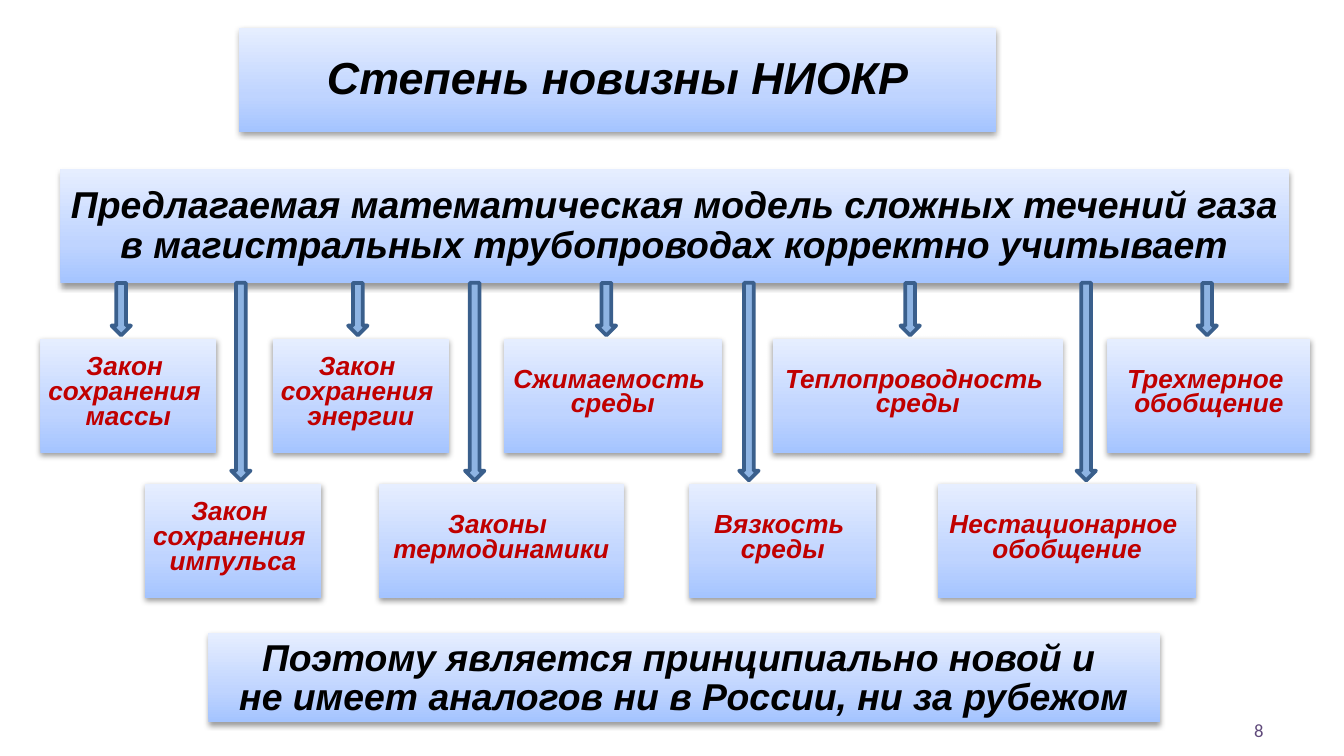
"""Builds the slide on the novelty of the gas flow model."""
from dataclasses import dataclass

from lxml import etree
from pptx import Presentation
from pptx import util as u
from pptx.dml.color import RGBColor
from pptx.enum import shapes, text
from pptx.oxml.ns import qn


@dataclass(frozen=True)
class Theme:
    """Colours, fonts and type sizes of the slide."""
    gradient: tuple = ((0, "A4C4FF"), (35, "BFD4FF"), (100, "E6EEFF"))
    arrow_fill: str = "8EB4E3"
    arrow_line: str = "3A5F8C"
    heading: str = "000000"
    factor: str = "C00000"
    number: str = "604A7B"
    font: str = "Arial"
    number_font: str = "Calibri"
    title_size: int = 24
    statement_size: int = 20
    factor_size: int = 14
    number_size: int = 10


THEME = Theme()
COLUMNS, ROWS = 100, 56.25
CELL = u.Inches(10) // COLUMNS
CARD_ROWS, ARROW_COLUMNS, ARROW_TOP = 8.5, 1.45, 21.05

UPPER = (
    (3, 13.1, 8.3, "Закон \nсохранения \nмассы"),
    (20.3, 13.1, 25.9, "Закон \nсохранения \nэнергии"),
    (37.5, 16.2, 44.4, "Сжимаемость \nсреды"),
    (57.5, 21.6, 67, "Теплопроводность \nсреды"),
    (82.4, 15.1, 89.1, "Трехмерное \nобобщение"),
)
LOWER = (
    (10.8, 13.1, 17.2, "Закон \nсохранения \nимпульса"),
    (28.2, 18.2, 34.6, "Законы \nтермодинамики"),
    (51.3, 13.9, 55, "Вязкость \nсреды"),
    (69.8, 19.2, 80.1, "Нестационарное \nобобщение"),
)
TIERS = ((25.2, 3.9, UPPER), (36, 14.7, LOWER))


def grid(*cells):
    """Convert grid cells to lengths."""
    return [u.Emu(round(cell * CELL)) for cell in cells]


def paint_panel(panel):
    """Give a panel its gradient and soft shadow."""
    panel.fill.gradient()
    panel.fill.gradient_angle = 90
    panel.line.fill.background()
    panel.shadow.inherit = False
    properties = panel.element.spPr
    stops = properties.find(".//" + qn("a:gsLst"))
    for stop in list(stops):
        stops.remove(stop)
    for position, colour in THEME.gradient:
        stop = etree.SubElement(stops, qn("a:gs"), pos=str(position * 1000))
        etree.SubElement(stop, qn("a:srgbClr"), val=colour)
    shadow = etree.SubElement(
        properties.find(qn("a:effectLst")), qn("a:outerShdw"),
        blurRad="40000", dist="20000", dir="5400000", rotWithShape="0")
    black = etree.SubElement(shadow, qn("a:srgbClr"), val="000000")
    etree.SubElement(black, qn("a:alpha"), val="38000")


def style_run(run, font, size, colour):
    """Set the typeface, size and colour of a run."""
    run.font.name = font
    run.font.size = u.Pt(size)
    run.font.color.rgb = RGBColor.from_string(colour)


def write_panel(panel, words, size, colour, first_spacing, next_spacing):
    """Write centred bold italic lines in a panel."""
    frame = panel.text_frame
    frame.text = words
    frame.word_wrap = True
    frame.auto_size = text.MSO_AUTO_SIZE.NONE
    frame.vertical_anchor = text.MSO_ANCHOR.MIDDLE
    frame.margin_left = frame.margin_right = u.Inches(0.01)
    frame.margin_top = frame.margin_bottom = u.Inches(0.01)
    for index, paragraph in enumerate(frame.paragraphs):
        paragraph.alignment = text.PP_ALIGN.CENTER
        paragraph.line_spacing = next_spacing if index else first_spacing
        after = etree.SubElement(paragraph._p.get_or_add_pPr(), qn("a:spcAft"))
        etree.SubElement(after, qn("a:spcPct"), val="35000")
        for run in paragraph.runs:
            style_run(run, THEME.font, size, colour)
            run.font.bold = run.font.italic = True


def set_title(slide, box, words):
    """Place and fill the title placeholder."""
    title = slide.shapes.title
    title.left, title.top, title.width, title.height = grid(*box)
    paint_panel(title)
    write_panel(title, words, THEME.title_size, THEME.heading, 0.9, 0.9)


def add_panel(slide, box, words, size, colour, first_spacing, next_spacing=0.5):
    """Add a shaded rectangle with text."""
    panel = slide.shapes.add_shape(shapes.MSO_SHAPE.RECTANGLE, *grid(*box))
    paint_panel(panel)
    write_panel(panel, words, size, colour, first_spacing, next_spacing)


def add_arrow(slide, left, rows):
    """Add a down arrow from the statement to a factor."""
    arrow = slide.shapes.add_shape(
        shapes.MSO_SHAPE.DOWN_ARROW, *grid(left, ARROW_TOP, ARROW_COLUMNS, rows))
    arrow.shadow.inherit = False
    arrow.fill.solid()
    arrow.fill.fore_color.rgb = RGBColor.from_string(THEME.arrow_fill)
    arrow.line.color.rgb = RGBColor.from_string(THEME.arrow_line)
    arrow.line.width = u.Pt(2)


def add_page_number(slide, box, number):
    """Add the page number at the lower right."""
    frame = slide.shapes.add_textbox(*grid(*box)).text_frame
    frame.text = number
    frame.word_wrap = True
    frame.vertical_anchor = text.MSO_ANCHOR.MIDDLE
    paragraph = frame.paragraphs[0]
    paragraph.alignment = text.PP_ALIGN.RIGHT
    style_run(paragraph.runs[0], THEME.number_font, THEME.number_size, THEME.number)


def main():
    """Build and save the slide."""
    deck = Presentation()
    deck.slide_width, deck.slide_height = grid(COLUMNS, ROWS)
    slide = deck.slides.add_slide(deck.slide_layouts[5])

    add_page_number(slide, (71.7, 52.8, 23.3, 3), "8")
    set_title(slide, (17.8, 2.1, 56.3, 7.7), "Степень новизны НИОКР")
    add_panel(slide, (4.5, 12.6, 91.4, CARD_ROWS),
              "Предлагаемая математическая модель сложных течений газа "
              "в магистральных трубопроводах корректно учитывает",
              THEME.statement_size, THEME.heading, 0.9)
    for top, _, factors in TIERS:
        for left, width, _, words in factors:
            add_panel(slide, (left, top, width, CARD_ROWS), words,
                      THEME.factor_size, THEME.factor, 0.5)
    add_panel(slide, (15.5, 47.1, 70.8, 6.6),
              "Поэтому является принципиально новой и \n"
              "не имеет аналогов ни в России, ни за рубежом",
              THEME.statement_size, THEME.heading, 0.9)
    for _, arrow_rows, factors in TIERS:
        for _, _, arrow_left, _ in factors:
            add_arrow(slide, arrow_left, arrow_rows)

    deck.save("out.pptx")


if __name__ == "__main__":
    main()
